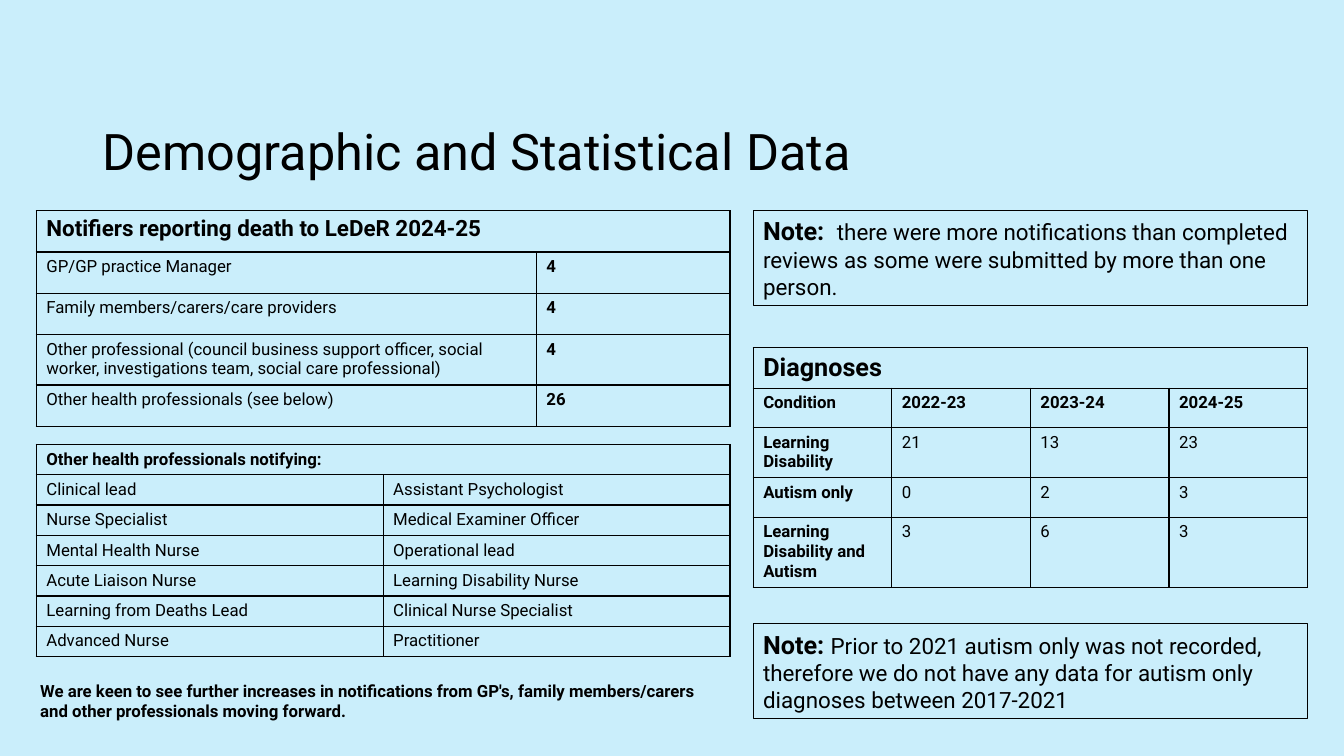
import pptx
import pptx.util
import pptx.dml.color
import pptx.enum.shapes
import pptx.enum.text
import pptx.oxml.ns
import lxml.etree

Inches = pptx.util.Inches
Pt = pptx.util.Pt
RGBColor = pptx.dml.color.RGBColor

BLACK = RGBColor(0x00, 0x00, 0x00)
SKY = RGBColor(0xCA, 0xEE, 0xFB)
FONT = "Roboto"

NOTIFIERS = [
    ["Notifiers reporting death to LeDeR 2024-25"],
    ["GP/GP practice Manager", "4"],
    ["Family members/carers/care providers", "4"],
    ["Other professional (council business support officer, social worker, "
     "investigations team, social care professional)", "4"],
    ["Other health professionals (see below)", "26"],
]
HEALTH = [
    ["Other health professionals notifying:"],
    ["Clinical lead", "Assistant Psychologist"],
    ["Nurse Specialist", "Medical Examiner Officer"],
    ["Mental Health Nurse", "Operational lead"],
    ["Acute Liaison Nurse", "Learning Disability Nurse"],
    ["Learning from Deaths Lead", "Clinical Nurse Specialist"],
    ["Advanced Nurse", "Practitioner"],
]
DIAGNOSES = [
    ["Diagnoses"],
    ["Condition", "2022-23", "2023-24", "2024-25"],
    ["Learning Disability", "21", "13", "23"],
    ["Autism only", "0", "2", "3"],
    ["Learning Disability and Autism", "3", "6", "3"],
]


def write(para, text, size=12, bold=False):
    run = para.add_run()
    run.text = text
    font = run.font
    font.name = FONT
    font.size = Pt(size)
    font.bold = bold
    font.color.rgb = BLACK


def border(cell, width=1):
    props = cell._tc.get_or_add_tcPr()
    for side in ("a:lnL", "a:lnR", "a:lnT", "a:lnB"):
        line = lxml.etree.SubElement(props, pptx.oxml.ns.qn(side), w=str(Pt(width)))
        fill = lxml.etree.SubElement(line, pptx.oxml.ns.qn("a:solidFill"))
        lxml.etree.SubElement(fill, pptx.oxml.ns.qn("a:srgbClr"), val=str(BLACK))


class Page:
    def __init__(self, deck):
        self.slide = deck.slides.add_slide(deck.slide_layouts[6])
        self.shapes = self.slide.shapes
        back = self.slide.background.fill
        back.solid()
        back.fore_color.rgb = SKY

    def label(self, text, left, top, width, height, middle=False, **style):
        frame = self.shapes.add_textbox(
            Inches(left), Inches(top), Inches(width), Inches(height)).text_frame
        frame.word_wrap = True
        if middle:
            frame.vertical_anchor = pptx.enum.text.MSO_ANCHOR.MIDDLE
            frame.paragraphs[0].line_spacing = 0.9
        write(frame.paragraphs[0], text, **style)

    def note(self, head, text, top):
        box = self.shapes.add_shape(
            pptx.enum.shapes.MSO_SHAPE.RECTANGLE,
            Inches(7.47), Inches(top), Inches(5.5), Inches(0.94))
        box.shadow.inherit = False
        box.fill.background()
        box.line.color.rgb = BLACK
        box.line.width = Pt(0.75)
        frame = box.text_frame
        frame.word_wrap = True
        frame.vertical_anchor = pptx.enum.text.MSO_ANCHOR.TOP
        para = frame.paragraphs[0]
        para.alignment = pptx.enum.text.PP_ALIGN.LEFT
        write(para, head, size=18, bold=True)
        write(para, text, size=16)

    def table(self, rows, left, top, widths, heights, size, strong):
        """Draw rows under a merged heading; strong(row, col) tells which cells are bold."""
        grid = self.shapes.add_table(
            len(rows), len(widths), Inches(left), Inches(top),
            Inches(sum(widths)), Inches(sum(heights))).table
        grid.first_row = grid.horz_banding = False
        for col, width in zip(grid.columns, widths):
            col.width = Inches(width)
        for row, height in zip(grid.rows, heights):
            row.height = Inches(height)
        for cell in grid.iter_cells():
            border(cell)
            cell.fill.background()
        grid.cell(0, 0).merge(grid.cell(0, len(widths) - 1))
        for r, texts in enumerate(rows):
            for c, text in enumerate(texts):
                write(grid.cell(r, c).text_frame.paragraphs[0], text,
                      size=12 if r else size, bold=r == 0 or strong(r, c))


def main():
    deck = pptx.Presentation()
    deck.slide_width = Inches(13.33)
    deck.slide_height = Inches(7.5)
    page = Page(deck)

    page.label("Demographic and Statistical Data", 0.92, 0.8, 11.5, 1.45,
               middle=True, size=36)
    page.table(NOTIFIERS, 0.36, 2.09, [4.96, 1.92], [0.41, 0.41, 0.41, 0.48, 0.41],
               16, lambda r, c: c == 1)
    page.note("Note:  ", "there were more notifications than completed reviews "
              "as some were submitted by more than one person.", 2.09)
    page.table(DIAGNOSES, 7.47, 3.45, [1.375] * 4, [0.4, 0.39, 0.5, 0.39, 0.7],
               18, lambda r, c: r == 1 or c == 0)
    page.note("Note: ", "Prior to 2021 autism only was not recorded, therefore we do "
              "not have any data for autism only diagnoses between 2017-2021", 6.19)
    page.table(HEALTH, 0.36, 4.41, [3.44] * 2, [0.3] * 7,
               12, lambda r, c: False)
    page.label("We are keen to see further increases in notifications from GP's, "
               "family members/carers and other professionals moving forward.",
               0.3, 6.7, 6.77, 0.5, bold=True)

    deck.save("out.pptx")


if __name__ == "__main__":
    main()
